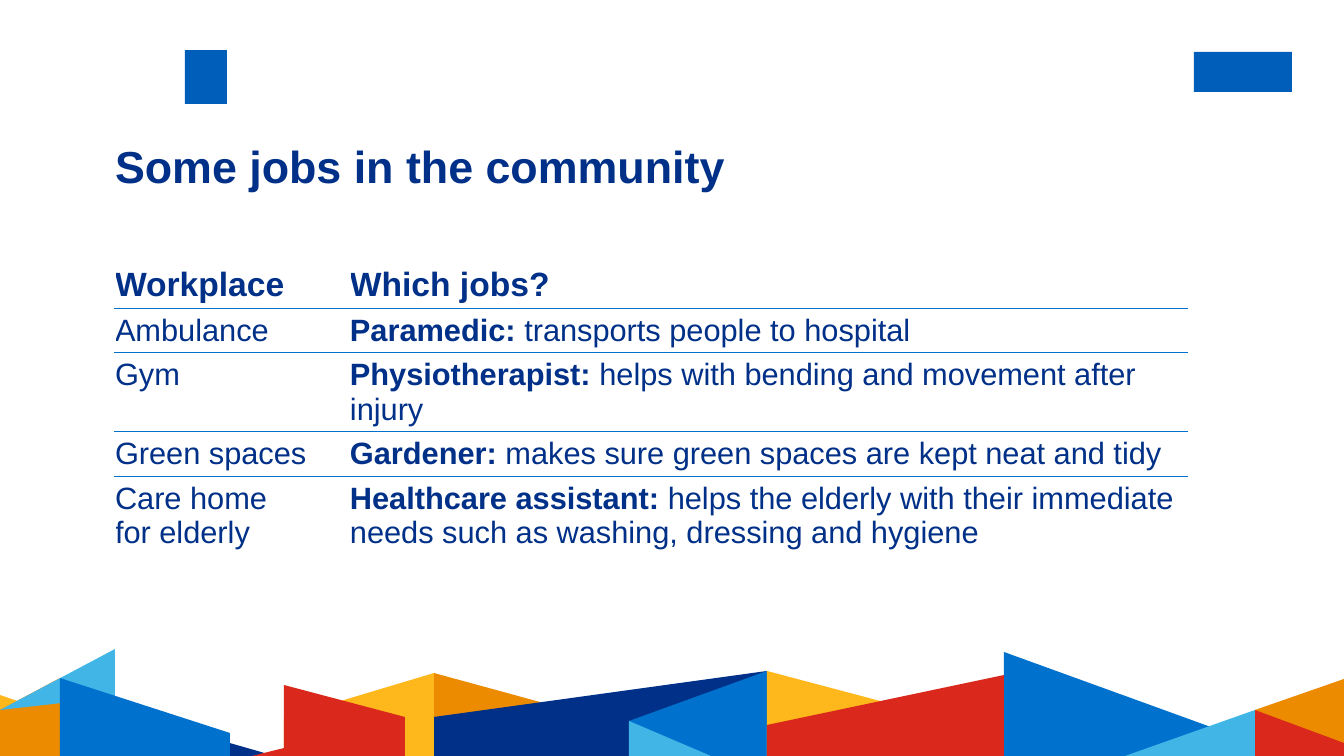
from lxml import etree
from pptx import Presentation
from pptx.dml.color import RGBColor
from pptx.enum.shapes import MSO_SHAPE
from pptx.enum.text import MSO_ANCHOR, PP_ALIGN
from pptx.oxml.ns import qn
from pptx.util import Emu, Pt

RECTANGLE = MSO_SHAPE.RECTANGLE
TOP = MSO_ANCHOR.TOP
LEFT = PP_ALIGN.LEFT

NAVY = RGBColor(0x00, 0x30, 0x87)
BLUE = RGBColor(0x00, 0x72, 0xCE)
BADGE_BLUE = RGBColor(0x00, 0x5E, 0xBB)
SKY = RGBColor(0x41, 0xB6, 0xE6)
ORANGE = RGBColor(0xED, 0x8B, 0x00)
YELLOW = RGBColor(0xFF, 0xB8, 0x1C)
RED = RGBColor(0xDA, 0x29, 0x1C)
WHITE = RGBColor(0xFF, 0xFF, 0xFF)

WIDTH, HEIGHT = 1344, 756
SCALE = 12192000 / WIDTH
FONT = "Arial"

# Badges: left, top, width, height
BADGES = [(185, 50, 42, 54), (1194, 52, 98, 40)]

# Skyline facets from back to front
FACETS = [
    (ORANGE, [(434, 673), (540, 702), (540, 727), (434, HEIGHT)]),
    (NAVY, [(434, 717), (767, 671), (767, HEIGHT), (434, HEIGHT)]),
    (ORANGE, [(1255, 710), (WIDTH, 679), (WIDTH, HEIGHT), (1255, HEIGHT)]),
    (YELLOW, [(0, 695), (96, 728), (96, HEIGHT), (0, HEIGHT)]),
    (YELLOW, [(284, 718), (434, 673), (434, HEIGHT), (284, HEIGHT)]),
    (ORANGE, [(0, 710), (60, 678), (60, HEIGHT), (0, HEIGHT)]),
    (RED, [(284, 685), (405, 717), (405, HEIGHT), (284, HEIGHT)]),
    (NAVY, [(177, 728), (275, HEIGHT), (177, HEIGHT)]),
    (RED, [(252, HEIGHT), (405, 718), (405, HEIGHT)]),
    (SKY, [(0, 710), (115, 649), (115, 697)]),
    (BLUE, [(60, 678), (230, 733), (230, HEIGHT), (60, HEIGHT)]),
    (BLUE, [(629, 721), (767, 671), (767, HEIGHT), (629, HEIGHT)]),
    (SKY, [(629, 721), (711, HEIGHT), (629, HEIGHT)]),
    (BLUE, [(1004, 652), (1255, 743), (1255, HEIGHT), (1004, HEIGHT)]),
    (RED, [(1255, 710), (WIDTH, 743), (WIDTH, HEIGHT), (1255, HEIGHT)]),
    (SKY, [(1125, HEIGHT), (1255, 710), (1255, HEIGHT)]),
    (YELLOW, [(767, 671), (899, 706), (899, HEIGHT), (767, HEIGHT)]),
    (RED, [(767, 725), (1004, 675), (1004, HEIGHT), (767, HEIGHT)]),
]

# Workplace, job, what the job does
JOBS = [
    ("Ambulance", "Paramedic: ", "transports people to hospital"),
    ("Gym", "Physiotherapist: ", "helps with bending and movement after injury"),
    ("Green spaces", "Gardener: ", "makes sure green spaces are kept neat and tidy"),
    ("Care home\nfor elderly", "Healthcare assistant: ",
     "helps the elderly with their immediate needs such as washing, dressing and hygiene"),
]
COLUMN_WIDTHS = [235, 837]
ROW_HEIGHTS = [47, 44, 79, 44, 98]


def px(length):
    return Emu(round(length * SCALE))


class SlideBuilder:
    def __init__(self, slide):
        self.slide = slide

    def paint(self, shape, color):
        shape.shadow.inherit = False
        shape.fill.solid()
        shape.fill.fore_color.rgb = color
        shape.line.fill.background()

    def rectangle(self, box, color):
        shape = self.slide.shapes.add_shape(RECTANGLE, *map(px, box))
        self.paint(shape, color)

    def polygon(self, points, color):
        builder = self.slide.shapes.build_freeform(*points[0], scale=SCALE)
        builder.add_line_segments(points[1:], close=True)
        self.paint(builder.convert_to_shape(), color)

    def span(self, para, text, size, bold):
        for number, line in enumerate(text.split("\n")):
            if number:
                para.add_line_break()
            run = para.add_run()
            run.text = line
            run.font.name = FONT
            run.font.size = Pt(size)
            run.font.bold = bold
            run.font.color.rgb = NAVY

    def title(self, box, text, size):
        title = self.slide.shapes.title
        title.left, title.top, title.width, title.height = map(px, box)
        frame = title.text_frame
        frame.margin_left = frame.margin_right = 0
        frame.margin_top = frame.margin_bottom = 0
        frame.word_wrap = True
        frame.vertical_anchor = TOP
        para = frame.paragraphs[0]
        para.alignment = LEFT
        para.line_spacing = 0.9
        self.span(para, text, size, True)

    def borders(self, cell, above, below):
        properties = cell._tc.get_or_add_tcPr()
        sides = [("L", WHITE), ("R", WHITE), ("T", above), ("B", below)]
        for position, (side, color) in enumerate(sides):
            line = etree.Element(qn(f"a:ln{side}"), w=str(Pt(1)))
            fill = etree.SubElement(line, qn("a:solidFill"))
            etree.SubElement(fill, qn("a:srgbClr"), val=str(color))
            properties.insert(position, line)

    def table(self, left, top, widths, heights, rows):
        """Each row is a list of cells; each cell is a list of (text, size, bold)."""
        box = (left, top, sum(widths), sum(heights))
        table = self.slide.shapes.add_table(len(rows), len(widths), *map(px, box)).table
        table.first_row = table.horz_banding = False
        for column, width in zip(table.columns, widths):
            column.width = px(width)
        last = len(rows) - 1
        for index, (row, height) in enumerate(zip(rows, heights)):
            table.rows[index].height = px(height)
            for cell, spans in zip(table.rows[index].cells, row):
                cell.fill.background()
                cell.margin_left, cell.margin_right = 0, px(10)
                cell.margin_top = cell.margin_bottom = px(5)
                self.borders(cell, BLUE if index else WHITE, WHITE if index == last else BLUE)
                for text, size, bold in spans:
                    self.span(cell.text_frame.paragraphs[0], text, size, bold)


def main():
    deck = Presentation()
    deck.slide_width, deck.slide_height = px(WIDTH), px(HEIGHT)
    page = SlideBuilder(deck.slides.add_slide(deck.slide_layouts[5]))

    # Badges and skyline
    for box in BADGES:
        page.rectangle(box, BADGE_BLUE)
    for color, points in FACETS:
        page.polygon(points, color)

    # Title
    page.title((115, 145, 1072, 60), "Some jobs in the community", 32)

    # Jobs table
    rows = [[[("Workplace", 24, True)], [("Which jobs?", 24, True)]]]
    for workplace, job, duty in JOBS:
        rows.append([[(workplace, 22, False)], [(job, 22, True), (duty, 22, False)]])
    page.table(115, 261, COLUMN_WIDTHS, ROW_HEIGHTS, rows)

    deck.save("out.pptx")


if __name__ == "__main__":
    main()
